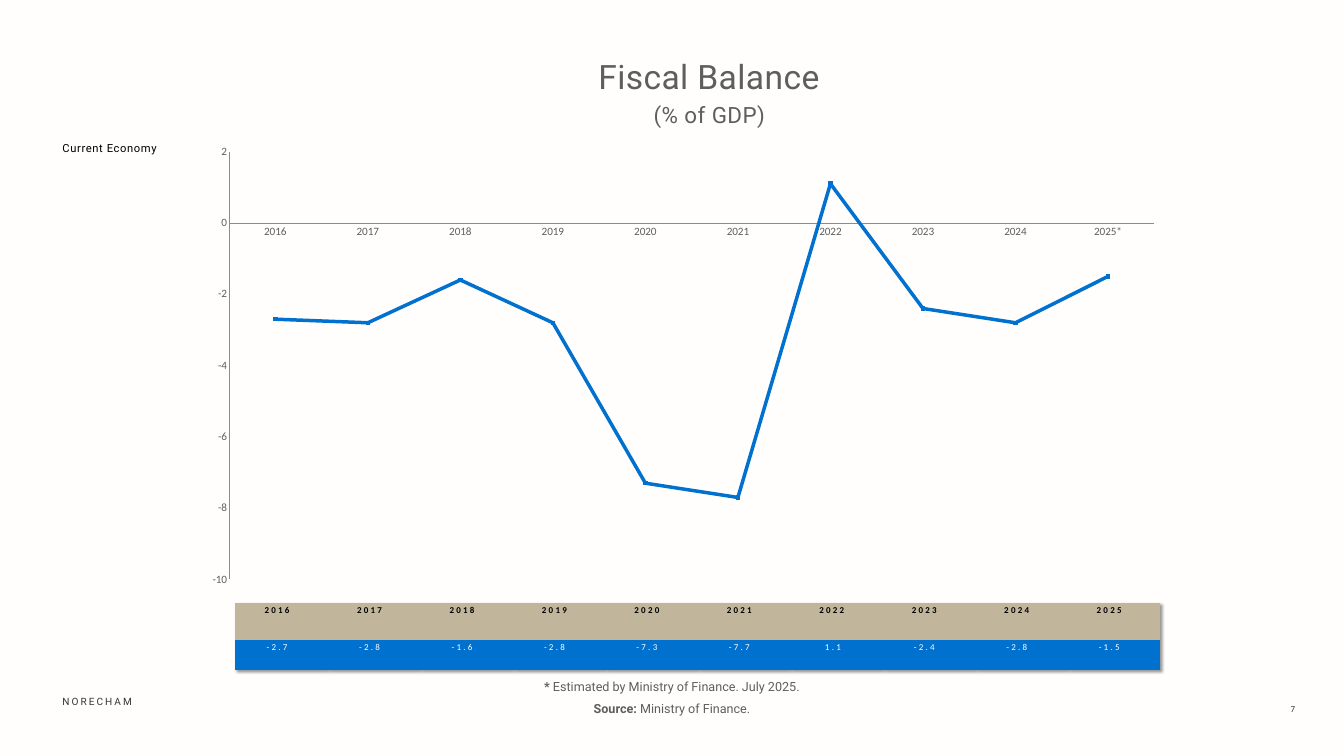
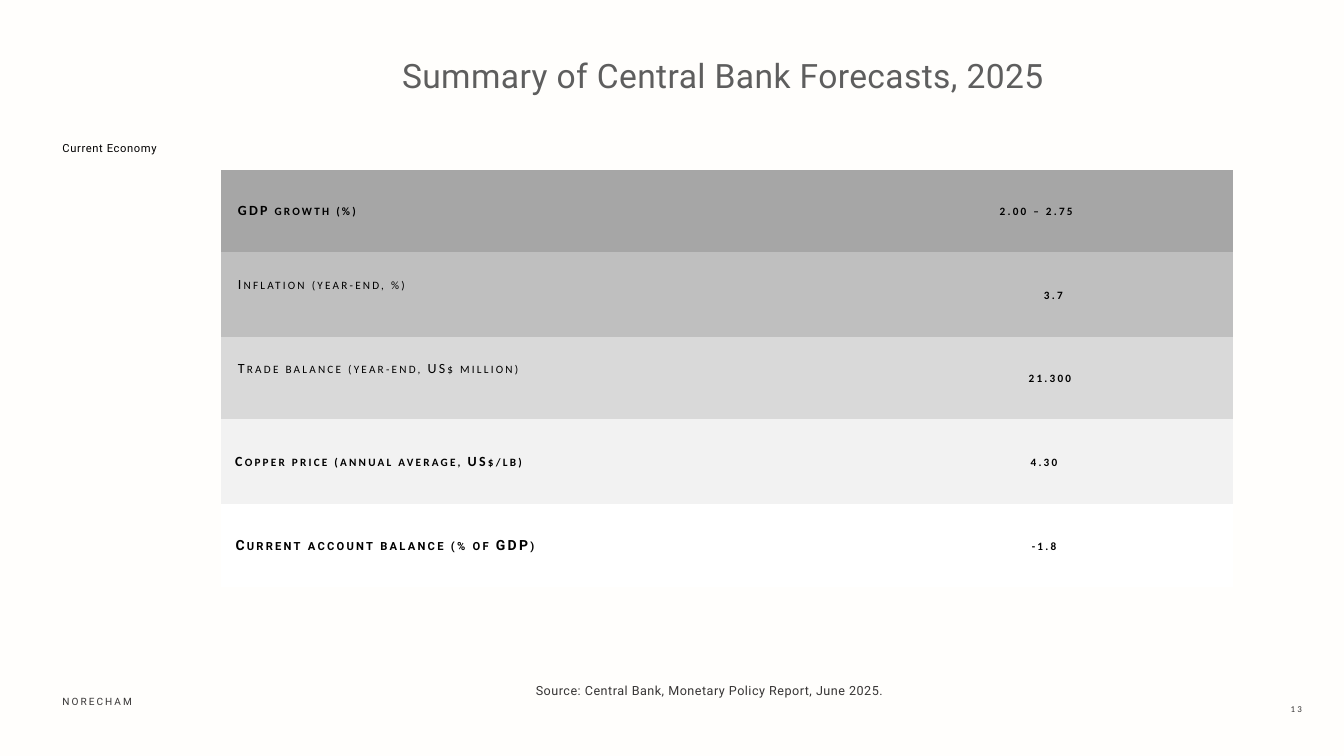
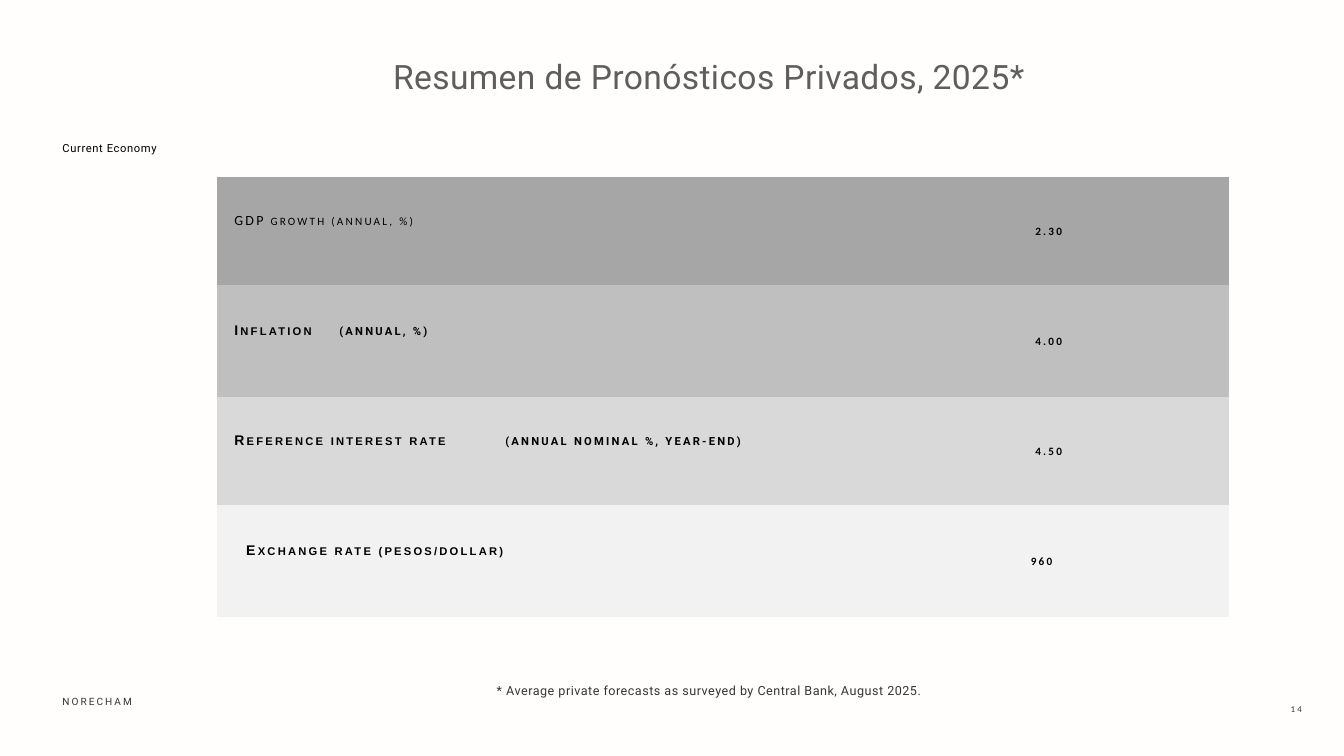
"""Builds three slides on the fiscal balance and the forecasts for 2025."""
import pptx
import pptx.chart.data
import pptx.dml.color
import pptx.enum.chart
import pptx.enum.text
import pptx.oxml
import pptx.oxml.ns
import pptx.util
from pptx.util import Cm

PAPER, INK, GREY, BLACK, WHITE = "FFFEFC", "373535", "5E5E5E", "000000", "FFFFFF"
BLUE, SAND, AXIS = "0071CE", "C1B69C", "8C8C8C"
BANDS = ["A6A6A6", "BFBFBF", "D9D9D9", "F2F2F2", "FFFFFF"]
NO_GRID_STYLE = "{2D5ABB26-0587-4C30-8999-92F81FD0307C}"
SECTION = "Current Economy"
FOOTER = "norecham"
ALIGN = pptx.enum.text.PP_ALIGN
ANCHOR = pptx.enum.text.MSO_ANCHOR

YEARS = ["2016", "2017", "2018", "2019", "2020", "2021", "2022", "2023", "2024", "2025"]
BALANCES = [-2.7, -2.8, -1.6, -2.8, -7.3, -7.7, 1.1, -2.4, -2.8, -1.5]
FISCAL_TITLE = ["Fiscal Balance", "(% of GDP)"]
FISCAL_NOTES = [
    [("* ", True), ("Estimated by Ministry of Finance. July 2025.", False)],
    [("Source: ", True), ("Ministry of Finance.", False)],
]

WIDE, NARROW = 0.86, 0.03
FORECASTS = [
    {
        "title": "Summary of Central Bank Forecasts, 2025", "number": "13",
        "title_at": (18.64, 2.36, 35.64, 2.31),
        "note": "Source: Central Bank, Monetary Policy Report, June 2025.",
        "note_at": (24.31, 34.34, 22.91, 0.86),
        "table_at": (11.13, 8.56), "heights": (4.14, 4.29),
        "rows": [
            {"label": [("GDP growth (%)", "Calibri", True)], "value": "2.00 – 2.75", "value_inset": NARROW},
            {"label": [("Inflation (year-end, %)", "Calibri", False)], "value": "3.7", "lift": 1},
            {"label": [("Trade balance (year-end, US$ million)", "Calibri", False)],
             "value": "21.300", "lift": 1},
            {"label": [("Copper price (annual average, US$/lb)", "Calibri", True)],
             "value": "4.30", "inset": 0.72, "value_inset": NARROW},
            {"label": [("Current account balance (% of GDP)", "Roboto", True)],
             "value": "-1.8", "inset": 0.74, "value_inset": NARROW},
        ],
    },
    {
        "title": "Resumen de Pronósticos Privados, 2025*", "number": "14",
        "title_at": (19.66, 2.39, 32.18, 2.31),
        "note": "* Average private forecasts as surveyed by Central Bank, August 2025.",
        "note_at": (23.39, 34.32, 24.71, 0.86),
        "table_at": (10.95, 8.92), "heights": (5.44, 5.64),
        "rows": [
            {"label": [("GDP growth (annual, %)", "Calibri", False)], "value": "2.30", "lift": 1},
            {"label": [("Inflation", "Arial", True), ("\t(annual, %)", "Roboto", True)],
             "value": "4.00", "lift": 1, "tab": 5.29},
            {"label": [("Reference interest rate", "Arial", True),
                       ("\t(annual nominal %, year-end)", "Roboto", True)],
             "value": "4.50", "lift": 1, "tab": 13.66},
            {"label": [("Exchange rate (pesos/dollar)", "Arial", True)],
             "value": "960", "lift": 1, "inset": 1.46, "value_inset": NARROW},
        ],
    },
]


def color(code):
    return pptx.dml.color.RGBColor.from_string(code)


def element(xml):
    return pptx.oxml.parse_xml(xml.replace("/>", " %s/>" % pptx.oxml.ns.nsdecls("a"), 1)
                               if xml.count("<") == 1
                               else xml.replace(">", " %s>" % pptx.oxml.ns.nsdecls("a"), 1))


def add_span(para, text, size, code, font="Roboto", bold=False, spacing=0, small=False):
    span = para.add_run()
    span.text = text
    span.font.name, span.font.size, span.font.bold = font, pptx.util.Pt(size), bold
    span.font.color.rgb = color(code)
    properties = span._r.get_or_add_rPr()
    if spacing:
        properties.set("spc", str(round(spacing * 100)))
    if small:
        properties.set("cap", "small")


def set_frame(box, anchor=ANCHOR.TOP, align=ALIGN.LEFT):
    frame = box.text_frame
    frame.word_wrap = True
    frame.auto_size = pptx.enum.text.MSO_AUTO_SIZE.NONE
    frame.vertical_anchor = anchor
    frame.margin_left = frame.margin_right = frame.margin_top = frame.margin_bottom = 0
    para = frame.paragraphs[0]
    para.alignment = align
    para.line_spacing = 1.2
    para.space_before = pptx.util.Pt(0)
    return para


def place(box, at):
    box.left, box.top, box.width, box.height = map(Cm, at)


def add_box(page, at, **layout):
    return set_frame(page.shapes.add_textbox(*map(Cm, at)), **layout)


def add_page(deck, title_lines, title_at, number):
    page = deck.slides.add_slide(deck.slide_layouts[1])
    place(page.shapes.title, title_at)
    para = set_frame(page.shapes.title, align=ALIGN.CENTER)
    for index, (line, size) in enumerate(zip(title_lines, (48, 32))):
        if index:
            para.add_line_break()
        add_span(para, line, size, GREY, spacing=0.6)

    section = page.placeholders[1]
    place(section, (3.15, 7.01, 11.68, 0.79))
    para = set_frame(section, anchor=ANCHOR.MIDDLE)
    properties = para._p.get_or_add_pPr()
    properties.set("marL", "0")
    properties.set("indent", "0")
    properties.append(element("<a:buNone/>"))
    add_span(para, SECTION, 16, BLACK, spacing=0.9)

    para = add_box(page, (3.15, 34.85, 11.68, 0.71), anchor=ANCHOR.MIDDLE)
    add_span(para, FOOTER, 18, INK, spacing=2.9, small=True)
    para = add_box(page, (65.05, 35.2, 2.5, 0.74))
    add_span(para, number, 16, INK, "Calibri", spacing=3.2, small=True)
    return page


def add_table(page, at, widths, heights):
    box = page.shapes.add_table(len(heights), len(widths), *map(Cm, at),
                                Cm(sum(widths)), Cm(sum(heights)))
    table = box.table
    table._tbl.tblPr[0].text = NO_GRID_STYLE
    for column, width in zip(table.columns, widths):
        column.width = Cm(width)
    for row, height in zip(table.rows, heights):
        row.height = Cm(height)
    return table


def fill_cell(cell, band, spans, size, code, align=ALIGN.LEFT, anchor=ANCHOR.MIDDLE,
              inset=0, lift=0, tab=None):
    cell.fill.solid()
    cell.fill.fore_color.rgb = color(band)
    cell.vertical_anchor = anchor
    cell.margin_left, cell.margin_bottom = Cm(inset), Cm(lift)
    cell.margin_right = cell.margin_top = 0
    para = cell.text_frame.paragraphs[0]
    para.alignment = align
    if tab:
        para._p.get_or_add_pPr().append(element(
            '<a:tabLst><a:tab pos="%d" algn="l"/></a:tabLst>' % Cm(tab)))
    for text, font, bold in spans:
        add_span(para, text, size, code, font, bold, 3.2, True)


def add_balance_chart(page):
    data = pptx.chart.data.CategoryChartData()
    data.categories = YEARS[:-1] + [YEARS[-1] + "*"]
    data.add_series("Series 1", BALANCES)
    chart = page.shapes.add_chart(pptx.enum.chart.XL_CHART_TYPE.LINE_MARKERS_STACKED,
                                  *map(Cm, (8.53, 7.01, 51.99, 22.58)), data).chart
    chart.has_legend = chart.has_title = False
    chart.font.name, chart.font.size = "Roboto", pptx.util.Pt(10)
    chart.font.color.rgb = color(GREY)
    for axis in (chart.category_axis, chart.value_axis):
        axis.has_major_gridlines = False
        axis.major_tick_mark = axis.minor_tick_mark = pptx.enum.chart.XL_TICK_MARK.NONE
        axis.format.line.color.rgb = color(AXIS)
        axis.format.line.width = pptx.util.Pt(1)
        font = axis.tick_labels.font
        font.name, font.size = "Calibri", pptx.util.Pt(16)
        font.color.rgb = color(GREY)
    scale = chart.value_axis
    scale.minimum_scale, scale.maximum_scale, scale.major_unit = -10, 2, 2

    chart.plots[0].vary_by_categories = False
    series = chart.plots[0].series[0]
    series.smooth = False
    series.format.line.color.rgb = color(BLUE)
    series.format.line.width = pptx.util.Pt(5)
    marker = series.marker
    marker.style, marker.size = pptx.enum.chart.XL_MARKER_STYLE.SQUARE, 5
    marker.format.fill.solid()
    marker.format.fill.fore_color.rgb = color(BLUE)
    marker.format.line.color.rgb = color(BLUE)

    area = chart._chartSpace.chart.plotArea
    for old in area.findall(pptx.oxml.ns.qn("c:layout")):
        area.remove(old)
    parts = [("layoutTarget", "inner"), ("xMode", "edge"), ("yMode", "edge"),
             ("x", 0.058), ("y", 0.028), ("w", 0.897), ("h", 0.955)]
    area.insert(0, pptx.oxml.parse_xml(
        "<c:layout %s><c:manualLayout>%s</c:manualLayout></c:layout>" % (
            pptx.oxml.ns.nsdecls("c"),
            "".join('<c:%s val="%s"/>' % part for part in parts))))


def add_fiscal_page(deck):
    page = add_page(deck, FISCAL_TITLE, (19.66, 2.39, 32.18, 4.01), "7")
    table = add_table(page, (11.86, 30.4), [4.66] * len(YEARS), [1.85, 1.52])
    table._tbl.tblPr.insert(0, element(
        '<a:effectLst><a:outerShdw blurRad="50800" dist="38100" dir="2700000" algn="tl">'
        '<a:srgbClr val="000000"><a:alpha val="40000"/></a:srgbClr>'
        "</a:outerShdw></a:effectLst>"))
    for column, (year, balance) in enumerate(zip(YEARS, BALANCES)):
        for row, (text, band, code) in enumerate([(year, SAND, BLACK),
                                                  (str(balance), BLUE, WHITE)]):
            fill_cell(table.cell(row, column), band, [(text, "Calibri", row == 0)],
                      16, code, ALIGN.CENTER, ANCHOR.TOP)

    box = page.shapes.add_textbox(*map(Cm, (25.27, 34.11, 17.2, 2.18)))
    box.text_frame.word_wrap = True
    for index, spans in enumerate(FISCAL_NOTES):
        para = box.text_frame.add_paragraph() if index else box.text_frame.paragraphs[0]
        para.alignment = ALIGN.CENTER
        para.space_before = pptx.util.Pt(9 * index)
        for text, bold in spans:
            add_span(para, text, 18, GREY, bold=bold)
    add_balance_chart(page)


def add_forecast_page(deck, forecast):
    page = add_page(deck, [forecast["title"]], forecast["title_at"], forecast["number"])
    para = add_box(page, forecast["note_at"], anchor=ANCHOR.BOTTOM, align=ALIGN.CENTER)
    add_span(para, forecast["note"], 18, INK, spacing=0.7)
    rows = forecast["rows"]
    heights = [forecast["heights"][index % 2] for index in range(len(rows))]
    table = add_table(page, forecast["table_at"], [32.39, 18.62], heights)
    for index, (row, band) in enumerate(zip(rows, BANDS)):
        fill_cell(table.cell(index, 0), band, row["label"], 20, BLACK,
                  inset=row.get("inset", WIDE), lift=row.get("lift", 0), tab=row.get("tab"))
        fill_cell(table.cell(index, 1), band, [(row["value"], "Calibri", True)], 20, BLACK,
                  ALIGN.CENTER, inset=row.get("value_inset", WIDE))


def main():
    deck = pptx.Presentation()
    deck.slide_width, deck.slide_height = Cm(67.74), Cm(38.1)
    backdrop = deck.slide_master.background.fill
    backdrop.solid()
    backdrop.fore_color.rgb = color(PAPER)
    add_fiscal_page(deck)
    for forecast in FORECASTS:
        add_forecast_page(deck, forecast)
    deck.save("out.pptx")


if __name__ == "__main__":
    main()
